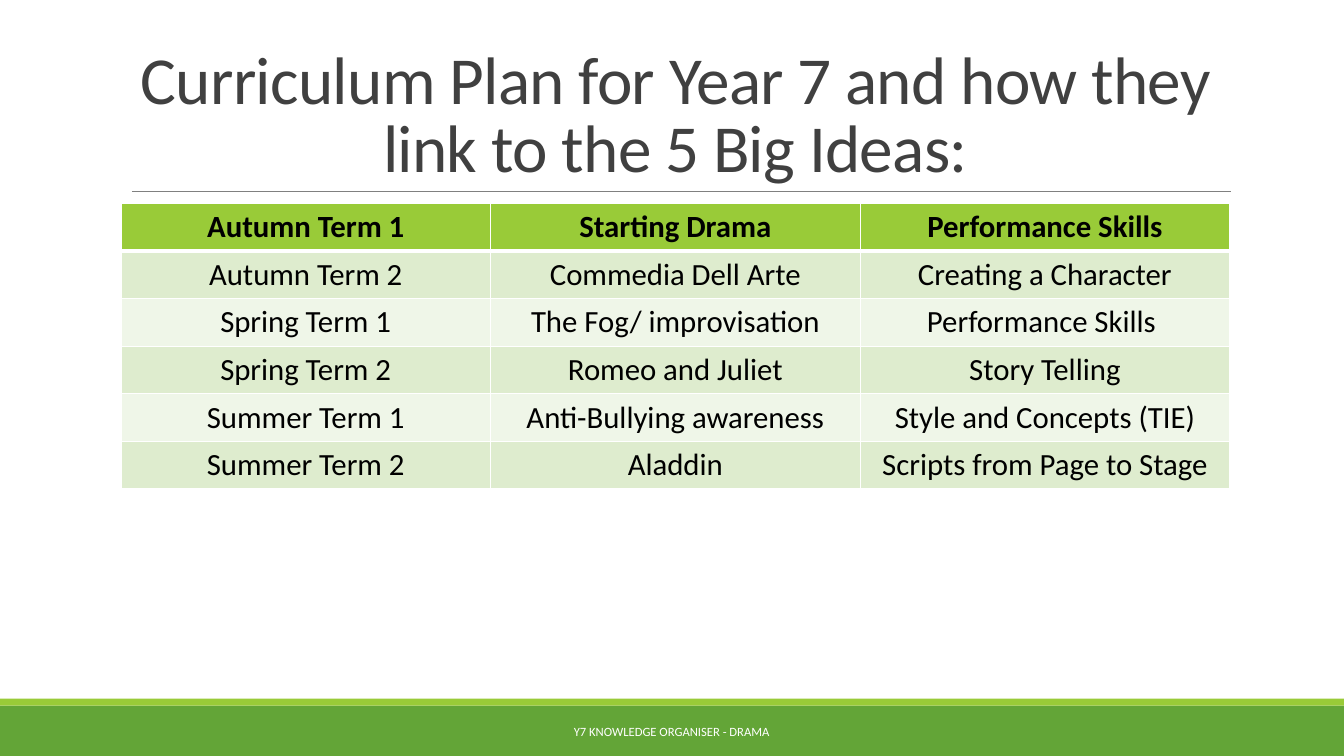
from lxml.etree import SubElement
from pptx import Presentation
from pptx.dml.color import RGBColor
from pptx.enum.shapes import MSO_CONNECTOR, MSO_SHAPE
from pptx.enum.text import MSO_ANCHOR, PP_ALIGN
from pptx.oxml.ns import qn
from pptx.util import Pt

WHITE = RGBColor(0xFF, 0xFF, 0xFF)
BLACK = RGBColor(0x00, 0x00, 0x00)
CHARCOAL = RGBColor(0x40, 0x40, 0x40)
GRAY = RGBColor(0x80, 0x80, 0x80)
GREEN = RGBColor(0x63, 0xA5, 0x37)
LIME = RGBColor(0x99, 0xCB, 0x38)
BAND_DARK = RGBColor(0xDE, 0xEC, 0xCE)
BAND_LIGHT = RGBColor(0xEF, 0xF6, 0xE8)

CURRICULUM = [
    ("Autumn Term 1", "Starting Drama", "Performance Skills"),
    ("Autumn Term 2", "Commedia Dell Arte", "Creating a Character"),
    ("Spring Term 1", "The Fog/ improvisation", "Performance Skills "),
    ("Spring Term 2", "Romeo and Juliet", "Story Telling"),
    ("Summer Term 1", "Anti-Bullying awareness", "Style and Concepts (TIE)"),
    ("Summer Term 2", "Aladdin", "Scripts from Page to Stage"),
]


class SlideBuilder:
    font_name = "Calibri"
    border_color = WHITE

    def __init__(self, slide):
        self.slide = slide

    def band(self, left, top, width, height, color):
        shape = self.slide.shapes.add_shape(
            MSO_SHAPE.RECTANGLE, Pt(left), Pt(top), Pt(width), Pt(height))
        shape.shadow.inherit = False
        shape.fill.solid()
        shape.fill.fore_color.rgb = color
        shape.line.fill.background()

    def rule(self, left, right, top, color, weight):
        connector = self.slide.shapes.add_connector(
            MSO_CONNECTOR.STRAIGHT, Pt(left), Pt(top), Pt(right), Pt(top))
        connector.line.color.rgb = color
        connector.line.width = Pt(weight)
        SubElement(connector._element.spPr, qn("a:effectLst"))

    def add_centered_run(self, text_frame, text, size, color, bold=False, line_spacing=1.0):
        paragraph = text_frame.paragraphs[0]
        paragraph.alignment = PP_ALIGN.CENTER
        paragraph.line_spacing = line_spacing
        run = paragraph.add_run()
        run.text = text
        font_format = {"name": self.font_name, "size": Pt(size), "bold": bold}
        for attribute, value in font_format.items():
            setattr(run.font, attribute, value)
        run.font.color.rgb = color
        return run

    def text(self, left, top, width, height, text, size, color, anchor,
             line_spacing=1.0, tracking=0):
        shape = self.slide.shapes.add_textbox(Pt(left), Pt(top), Pt(width), Pt(height))
        frame_format = {"word_wrap": True, "vertical_anchor": anchor}
        for attribute, value in frame_format.items():
            setattr(shape.text_frame, attribute, value)
        run = self.add_centered_run(shape.text_frame, text, size, color,
                                    line_spacing=line_spacing)
        if tracking:
            run._r.get_or_add_rPr().set("spc", str(round(tracking * 100)))

    def border(self, cell, side, weight):
        line = SubElement(cell._tc.get_or_add_tcPr(), qn(f"a:{side}"), w=str(Pt(weight)))
        fill = SubElement(line, qn("a:solidFill"))
        SubElement(fill, qn("a:srgbClr"), val=str(self.border_color))

    def table(self, left, top, width, row_height, rows, size):
        table = self.slide.shapes.add_table(
            len(rows), len(rows[0]), Pt(left), Pt(top),
            Pt(width), Pt(row_height * len(rows))).table
        for row_index, row in enumerate(rows):
            header = row_index == 0
            color = LIME if header else (BAND_LIGHT, BAND_DARK)[row_index % 2]
            weights = {"lnL": 1, "lnR": 1, "lnT": 3 if row_index == 1 else 1,
                       "lnB": 3 if header else 1}
            for column_index, text in enumerate(row):
                cell = table.cell(row_index, column_index)
                self.add_centered_run(cell.text_frame, text, size, BLACK, header)
                for side, weight in weights.items():
                    self.border(cell, side, weight)
                cell.fill.solid()
                cell.fill.fore_color.rgb = color


def main():
    presentation = Presentation()
    presentation.slide_width = Pt(960)
    presentation.slide_height = Pt(540)
    builder = SlideBuilder(presentation.slides.add_slide(presentation.slide_layouts[6]))

    builder.band(0, 504, 960, 36, GREEN)
    builder.band(0, 499, 960, 5, LIME)
    builder.rule(94.2, 879, 136.8, GRAY, 0.5)
    builder.text(86.4, 22.3, 792, 114.5,
                 "Curriculum Plan for Year 7 and how they link to the 5 Big Ideas:",
                 48, CHARCOAL, MSO_ANCHOR.BOTTOM, line_spacing=0.85, tracking=-0.5)
    builder.table(86.4, 145.4, 792, 34, CURRICULUM, 22)
    builder.text(290, 508.3, 379.4, 28.8, "Y7 KNOWLEDGE ORGANISER - DRAMA",
                 9, WHITE, MSO_ANCHOR.MIDDLE)

    presentation.save("out.pptx")


if __name__ == "__main__":
    main()
